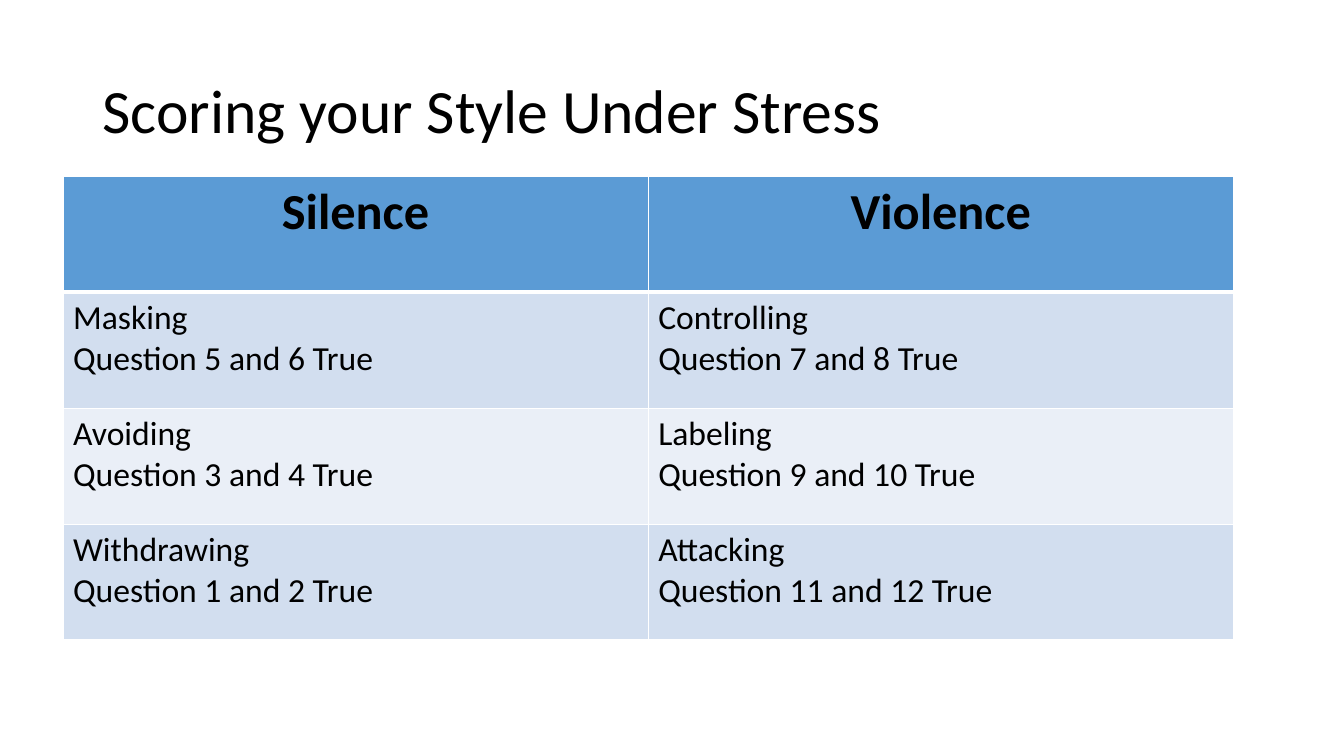
from lxml.etree import SubElement
from pptx import Presentation
from pptx.dml.color import RGBColor
from pptx.enum.text import MSO_ANCHOR, PP_ALIGN
from pptx.oxml.ns import qn
from pptx.util import Pt

BLACK = RGBColor(0x00, 0x00, 0x00)
WHITE = RGBColor(0xFF, 0xFF, 0xFF)
HEADER_BLUE = RGBColor(0x5B, 0x9B, 0xD5)
BAND_BLUE = RGBColor(0xD2, 0xDE, 0xEF)
BAND_PALE = RGBColor(0xEA, 0xEF, 0xF7)

STYLES = [
    ("Silence", "Violence"),
    ("Masking\nQuestion 5 and 6 True", "Controlling\nQuestion 7 and 8 True"),
    ("Avoiding\nQuestion 3 and 4 True", "Labeling\nQuestion 9 and 10 True"),
    ("Withdrawing\nQuestion 1 and 2 True", "Attacking\nQuestion 11 and 12 True"),
]


class SlideBuilder:
    font_name = "Calibri"

    def __init__(self, presentation):
        self.slide = presentation.slides.add_slide(presentation.slide_layouts[5])

    def format_text(self, text_frame, size, bold=False, alignment=PP_ALIGN.LEFT):
        for paragraph in text_frame.paragraphs:
            paragraph.alignment = alignment
            for run in paragraph.runs:
                run.font.name = self.font_name
                run.font.size = Pt(size)
                run.font.bold = bold
                run.font.color.rgb = BLACK

    def title(self, text, left, top, width, height):
        shape = self.slide.shapes.title
        shape.left, shape.top = Pt(left), Pt(top)
        shape.width, shape.height = Pt(width), Pt(height)
        text_frame = shape.text_frame
        text_frame.text = text
        text_frame.word_wrap = True
        text_frame.vertical_anchor = MSO_ANCHOR.MIDDLE
        text_frame.paragraphs[0].line_spacing = 0.9
        self.format_text(text_frame, 44)

    def border(self, cell, side, width):
        properties = cell._tc.get_or_add_tcPr()
        line = SubElement(properties, qn(f"a:ln{side}"), w=str(Pt(width)))
        fill = SubElement(line, qn("a:solidFill"))
        SubElement(fill, qn("a:srgbClr"), val=str(WHITE))

    def table(self, rows, left, top, width, height):
        frame = self.slide.shapes.add_table(
            len(rows), len(rows[0]), Pt(left), Pt(top), Pt(width), Pt(height)
        )
        for row_index, row in enumerate(rows):
            header = row_index == 0
            band = BAND_BLUE if row_index % 2 else BAND_PALE
            for column_index, text in enumerate(row):
                cell = frame.table.cell(row_index, column_index)
                cell.text_frame.text = text
                if header:
                    self.format_text(cell.text_frame, 36, True, PP_ALIGN.CENTER)
                else:
                    self.format_text(cell.text_frame, 24)
                for side in "LRTB":
                    thick = (header and side == "B") or (row_index == 1 and side == "T")
                    self.border(cell, side, 3 if thick else 1)
                cell.fill.solid()
                cell.fill.fore_color.rgb = HEADER_BLUE if header else band


def main():
    presentation = Presentation()
    presentation.slide_width, presentation.slide_height = Pt(960), Pt(540)
    builder = SlideBuilder(presentation)
    builder.title("Scoring your Style Under Stress", 66, 28.75, 828, 104.4)
    builder.table(STYLES, 45, 126, 836, 331.2)
    presentation.save("out.pptx")


if __name__ == "__main__":
    main()
